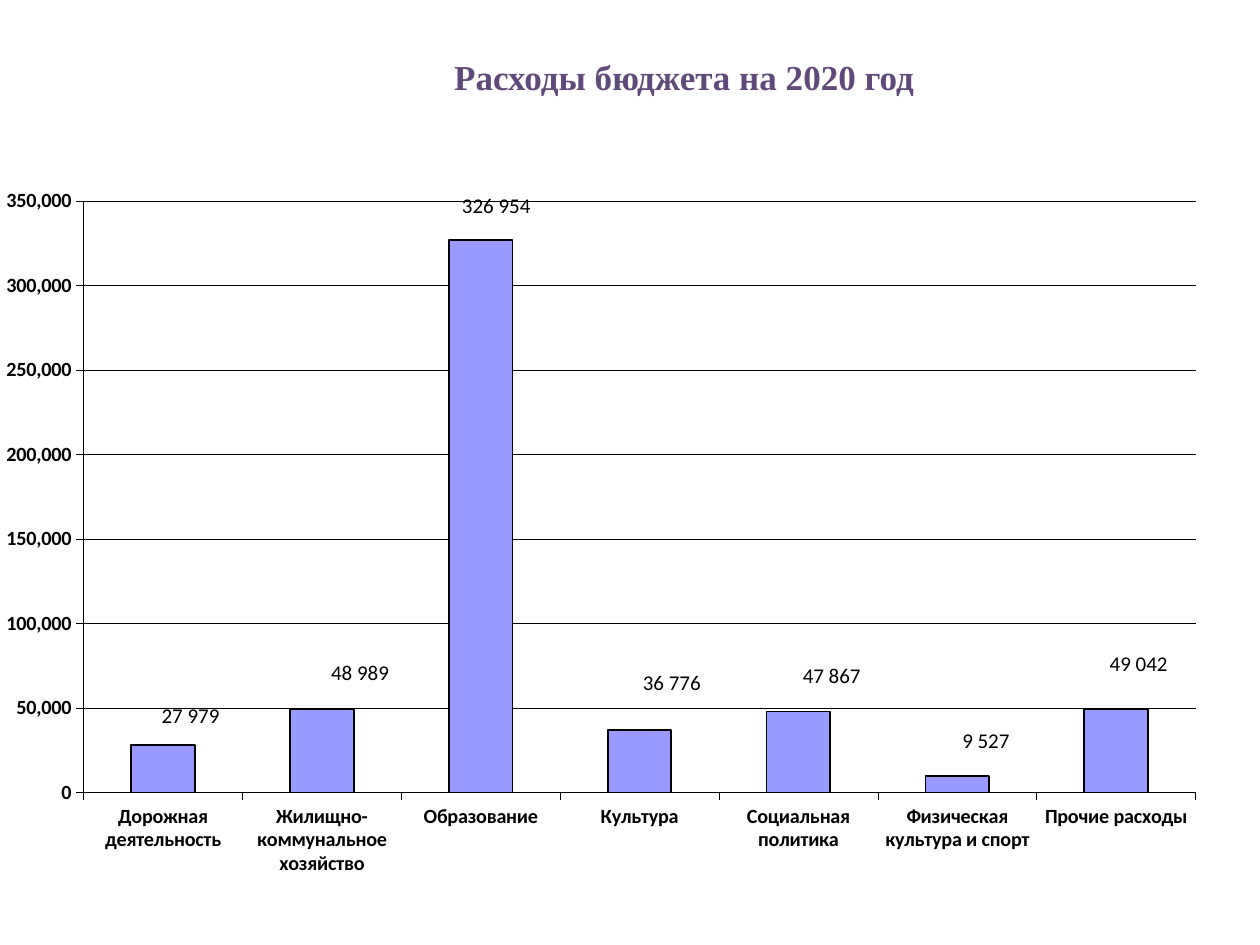
from lxml import etree
from pptx import Presentation
from pptx.chart.data import CategoryChartData
from pptx.dml.color import RGBColor
from pptx.enum.chart import XL_CHART_TYPE, XL_LABEL_POSITION, XL_TICK_LABEL_POSITION, XL_TICK_MARK
from pptx.enum.text import MSO_ANCHOR, MSO_AUTO_SIZE, PP_ALIGN
from pptx.oxml.ns import qn
from pptx.util import Inches, Pt

COLUMN_CLUSTERED = XL_CHART_TYPE.COLUMN_CLUSTERED
OUTSIDE_END = XL_LABEL_POSITION.OUTSIDE_END
LABELS_LOW = XL_TICK_LABEL_POSITION.LOW
TICK_OUTSIDE, TICK_NONE = XL_TICK_MARK.OUTSIDE, XL_TICK_MARK.NONE
MIDDLE, CENTER, NO_AUTOSIZE = MSO_ANCHOR.MIDDLE, PP_ALIGN.CENTER, MSO_AUTO_SIZE.NONE

PURPLE = RGBColor(0x60, 0x4A, 0x7B)
LAVENDER = RGBColor(0x99, 0x99, 0xFF)
BLACK = RGBColor(0, 0, 0)
TITLE_ONLY = 5
SPACED_THOUSANDS = "# ##0"

# Category, amount, label shift as a percentage of the chart's width and height
EXPENSES = [
    ("Дорожная деятельность", 27979, 2.3, -1.6),
    ("Жилищно-коммунальное хозяйство", 48989, 3.2, -2.7),
    ("Образование", 326954, 1.3, -2.3),
    ("Культура", 36776, 2.7, -4.2),
    ("Социальная политика", 47867, 2.8, -2.6),
    ("Физическая культура и спорт", 9527, 2.4, -2.5),
    ("Прочие расходы", 49042, 1.9, -3.9),
]


class BudgetSlide:
    """Holds the fonts and the current slide; lengths are percentages of its size."""

    title_font, chart_font = "Times New Roman", "Calibri"

    def __init__(self, deck):
        self.deck = deck
        self.slide = deck.slides.add_slide(deck.slide_layouts[TITLE_ONLY])

    def place(self, left, top, width, height):
        across, down = self.deck.slide_width, self.deck.slide_height
        shares = (left, across), (top, down), (width, across), (height, down)
        return [round(share * length / 100) for share, length in shares]

    def style_font(self, font, name, size, color, bold):
        font.name, font.size, font.bold = name, Pt(size), bold
        font.color.rgb = color

    def style_line(self, line, width):
        line.color.rgb = BLACK
        line.width = Pt(width)

    def add_title(self, text, *area):
        title = self.slide.shapes.title
        title.left, title.top, title.width, title.height = self.place(*area)
        frame = title.text_frame
        frame.text = text
        frame.auto_size = NO_AUTOSIZE
        frame.vertical_anchor = MIDDLE
        para = frame.paragraphs[0]
        para.alignment = CENTER
        self.style_font(para.runs[0].font, self.title_font, 20, PURPLE, True)

    def add_column_chart(self, rows, *area):
        data = CategoryChartData(number_format=SPACED_THOUSANDS)
        data.categories = [row[0] for row in rows]
        data.add_series("Расходы", [row[1] for row in rows])
        frame = self.slide.shapes.add_chart(COLUMN_CLUSTERED, *self.place(*area), data)
        chart = frame.chart
        chart.has_legend = chart.has_title = False
        self.style_font(chart.font, self.chart_font, 11.5, BLACK, True)
        plot = chart.plots[0]
        plot.vary_by_categories = False
        plot.gap_width = 150
        series = plot.series[0]
        series.format.fill.solid()
        series.format.fill.fore_color.rgb = LAVENDER
        self.style_line(series.format.line, 1)
        self.style_axes(chart)
        plot_area = plot._element.getparent()
        for old in plot_area.findall(qn("c:layout")):
            plot_area.remove(old)
        plot_area.insert(0, self.manual_layout(
            layoutTarget="inner", xMode="edge", yMode="edge", x=0.07, y=0.02, w=0.93, h=0.84))
        self.add_labels(series, rows)

    def style_axes(self, chart):
        for axis in (chart.category_axis, chart.value_axis):
            axis.major_tick_mark, axis.minor_tick_mark = TICK_OUTSIDE, TICK_NONE
            self.style_font(axis.tick_labels.font, self.chart_font, 11.5, BLACK, True)
            self.style_line(axis.format.line, 0.25)
        categories, values = chart.category_axis, chart.value_axis
        categories.tick_label_position = LABELS_LOW
        text_body = categories._element.find(qn("c:txPr")).find(qn("a:bodyPr"))
        text_body.set("rot", "0")
        text_body.set("vert", "horz")
        values.minimum_scale, values.maximum_scale, values.major_unit = 0, 350000, 50000
        values.tick_labels.number_format = "#,##0"
        values.tick_labels.number_format_is_linked = False
        self.style_line(values.major_gridlines.format.line, 0.25)

    def add_labels(self, series, rows):
        labels = series.data_labels
        labels.show_value = True
        labels.number_format = SPACED_THOUSANDS
        labels.number_format_is_linked = False
        self.style_font(labels.font, self.chart_font, 12, BLACK, False)
        for index in range(len(rows)):
            label = series.points[index].data_label
            self.style_font(label.font, self.chart_font, 12, BLACK, False)
            label.position = OUTSIDE_END
        for leader in series._element.iter(qn("c:showLeaderLines")):
            leader.set("val", "0")
        for element in series._element.iter(qn("c:dLbl")):
            index = element.find(qn("c:idx"))
            _, _, right, down = rows[int(index.get("val"))]
            for old in element.findall(qn("c:layout")):
                element.remove(old)
            index.addnext(self.manual_layout(x=right / 100, y=down / 100))

    def manual_layout(self, **settings):
        layout = etree.Element(qn("c:layout"))
        manual = etree.SubElement(layout, qn("c:manualLayout"))
        for name, value in settings.items():
            etree.SubElement(manual, qn(f"c:{name}")).set("val", str(value))
        return layout


def main():
    deck = Presentation()
    deck.slide_width, deck.slide_height = Inches(10), Inches(7.5)
    page = BudgetSlide(deck)
    page.add_title("Расходы бюджета на 2020 год", 29.3, 5.1, 50, 5.9)
    page.add_column_chart(EXPENSES, 0, 19.8, 94.9, 74.5)
    deck.save("out.pptx")


if __name__ == "__main__":
    main()
